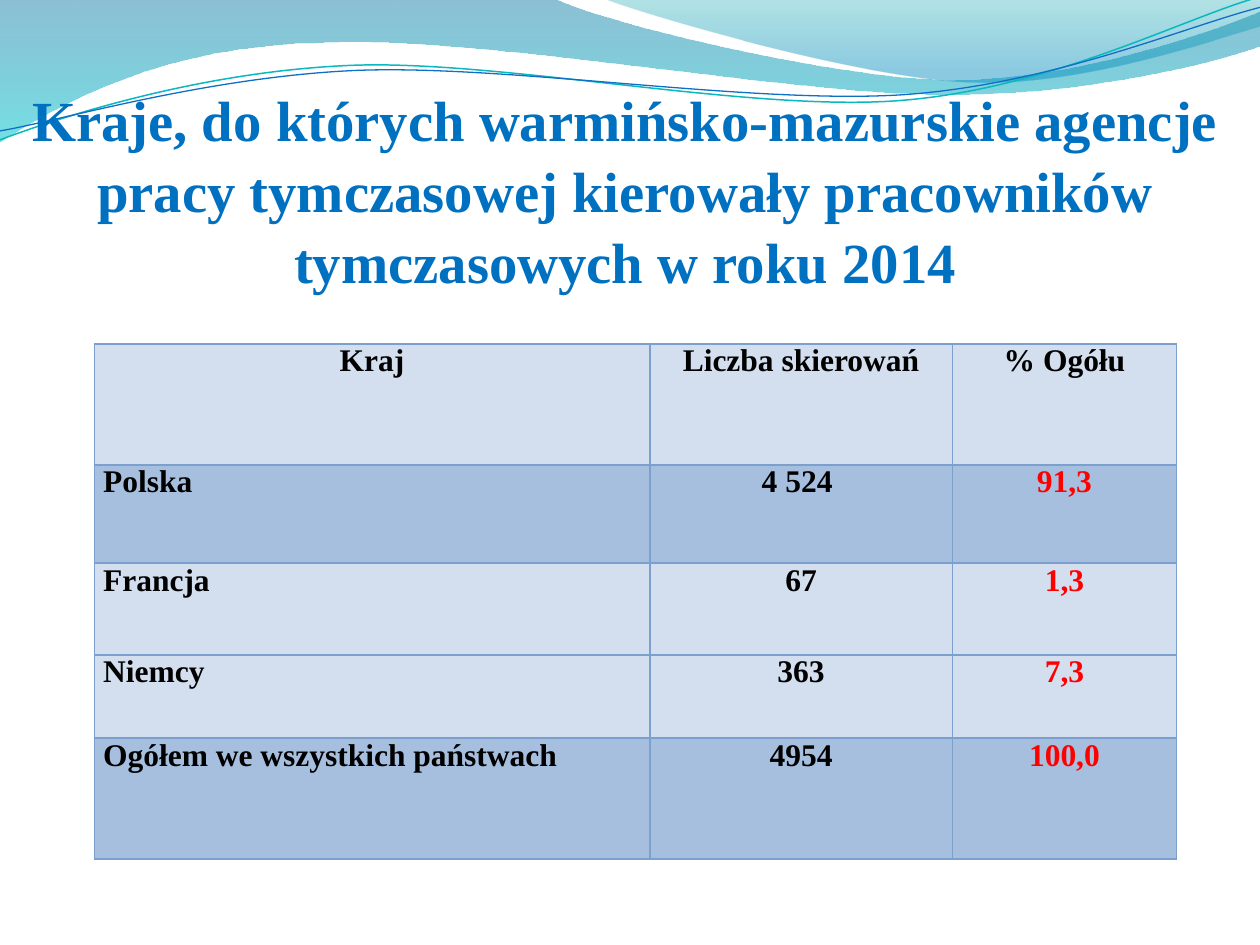
from lxml.etree import SubElement
from pptx import Presentation
from pptx.dml.color import RGBColor
from pptx.enum.text import MSO_ANCHOR as Anchor, PP_ALIGN as Align
from pptx.oxml.ns import qn
from pptx.util import Cm, Pt

TITLE = ("Kraje, do których warmińsko-mazurskie agencje pracy tymczasowej "
         "kierowały pracowników tymczasowych w roku 2014")
ROWS = [
    ("Kraj", "Liczba skierowań", "% Ogółu"),
    ("Polska", "4 524 ", "91,3"),
    ("Francja", "67", "1,3"),
    ("Niemcy", "363", "7,3"),
    ("Ogółem we wszystkich państwach", "4954", "100,0"),
]
COLUMN_WIDTHS = [11.2, 6.1, 4.52]
ROW_HEIGHTS = [2.44, 1.98, 1.85, 1.68, 2.44]
LIGHT, DARK, BORDER = "D3DFEE", "A7BFDE", "7BA0CD"
ROW_FILLS = [LIGHT, DARK, LIGHT, LIGHT, DARK]
TITLE_FONT = {"name": "Times New Roman", "size": Pt(32.4), "bold": True}
TABLE_FONT = {"name": "Times New Roman", "size": Pt(18), "bold": True}

# Outlines in hundredths of a centimetre: a start point, then segments of
# one point (straight line) or three points (Bezier curve).
# Gradient stops: position, colour, opacity in percent.
WAVES = [
    {"start": (0, -3),
     "segments": [
         [(1118, -3)],
         [(1209, 43), (1687, 160), (1925, 160)],
         [(2167, 160), (2433, 66), (2540, 23)],
         [(2543, 91)],
         [(2497, 112), (2210, 193), (1895, 190)],
         [(1580, 190), (970, 71), (653, 86)],
         [(328, 89), (117, 211), (-3, 287)]],
     "stops": [(0, "0074A1", 45), (1, "00C6CF", 55)]},
    {"start": (1217, -3),
     "segments": [
         [(1293, 28), (1732, 157), (1953, 165)],
         [(2174, 175), (2441, 81), (2540, 53)],
         [(2540, 0)]],
     "stops": [(0, "00A1A9", 30), (0.8, "008BBF", 45)]},
    {"start": (0, 282),
     "segments": [
         [(122, 236), (401, 145), (704, 132)],
         [(1003, 119), (1506, 226), (1811, 203)],
         [(2116, 180), (2383, 38), (2535, -5)]],
     "line": ("0AB8BF", 0.85)},
    {"start": (0, 264),
     "segments": [
         [(119, 244), (417, 155), (719, 142)],
         [(1024, 130), (1516, 211), (1821, 191)],
         [(2123, 170), (2390, 53), (2540, 15)]],
     "line": ("0F6FC6", 0.75)},
]


def rgb(value):
    return RGBColor.from_string(value)


def format_font(font, values, color):
    for name, value in values.items():
        setattr(font, name, value)
    font.color.rgb = rgb(color)


def curve_segments(shape, segments):
    """Turn the straight runs of each three-point segment into one Bezier."""
    lines = iter(list(shape._element.iter(qn("a:lnTo"))))
    for segment in segments:
        first, *others = [next(lines) for point in segment]
        if others:
            first.tag = qn("a:cubicBezTo")
            for line in others:
                first.append(line[0])
                line.getparent().remove(line)


def fill_gradient(shape, stops):
    shape.fill.gradient()
    shape.fill.gradient_angle = 270
    for stop, (position, color, opacity) in zip(shape.fill.gradient_stops, stops):
        stop.position = position
        stop.color.rgb = rgb(color)
    colors = shape._element.spPr.iter(qn("a:srgbClr"))
    for element, (position, color, opacity) in zip(colors, stops):
        SubElement(element, qn("a:alpha"), val=str(opacity * 1000))


def add_wave(slide, wave):
    filled = "stops" in wave
    builder = slide.shapes.build_freeform(*wave["start"], scale=Cm(0.01))
    points = [point for segment in wave["segments"] for point in segment]
    builder.add_line_segments(points, close=filled)
    shape = builder.convert_to_shape()
    shape.shadow.inherit = False
    curve_segments(shape, wave["segments"])
    if filled:
        fill_gradient(shape, wave["stops"])
        shape.line.fill.background()
    else:
        color, width = wave["line"]
        shape.fill.background()
        shape.line.color.rgb = rgb(color)
        shape.line.width = Pt(width)


def add_title(slide):
    box = slide.shapes.add_textbox(Cm(0.5), Cm(0.53), Cm(24.2), Cm(5.41))
    frame = box.text_frame
    frame.word_wrap = True
    frame.vertical_anchor = Anchor.BOTTOM
    frame.margin_left = frame.margin_right = frame.margin_bottom = 0
    paragraph = frame.paragraphs[0]
    paragraph.text = TITLE
    paragraph.alignment = Align.CENTER
    paragraph.line_spacing = 1.04
    format_font(paragraph.runs[0].font, TITLE_FONT, "0070C0")


def add_borders(cell):
    properties = cell._tc.get_or_add_tcPr()
    for side in ("lnL", "lnR", "lnT", "lnB"):
        line = SubElement(properties, qn(f"a:{side}"), w=str(Pt(1)))
        fill = SubElement(line, qn("a:solidFill"))
        SubElement(fill, qn("a:srgbClr"), val=BORDER)


def fill_cell(cell, text, row, column):
    add_borders(cell)
    cell.fill.solid()
    cell.fill.fore_color.rgb = rgb(ROW_FILLS[row])
    cell.margin_left = cell.margin_right = Cm(0.18)
    cell.margin_top = cell.margin_bottom = 0
    paragraph = cell.text_frame.paragraphs[0]
    paragraph.text = text
    is_header = row == 0
    paragraph.alignment = Align.CENTER if is_header or column else Align.LEFT
    is_share = column == 2 and not is_header
    format_font(paragraph.runs[0].font, TABLE_FONT,
                "FF0000" if is_share else "000000")


def add_country_table(slide):
    table = slide.shapes.add_table(
        len(ROWS), len(COLUMN_WIDTHS), Cm(1.9), Cm(6.93),
        Cm(sum(COLUMN_WIDTHS)), Cm(sum(ROW_HEIGHTS))).table
    for column, width in zip(table.columns, COLUMN_WIDTHS):
        column.width = Cm(width)
    for row, height in zip(table.rows, ROW_HEIGHTS):
        row.height = Cm(height)
    for row, texts in enumerate(ROWS):
        for column, text in enumerate(texts):
            fill_cell(table.cell(row, column), text, row, column)


def main():
    presentation = Presentation()
    presentation.slide_width, presentation.slide_height = Cm(25.4), Cm(19.05)
    slide = presentation.slides.add_slide(presentation.slide_layouts[6])
    for wave in WAVES:
        add_wave(slide, wave)
    add_title(slide)
    add_country_table(slide)
    presentation.save("out.pptx")


if __name__ == "__main__":
    main()
